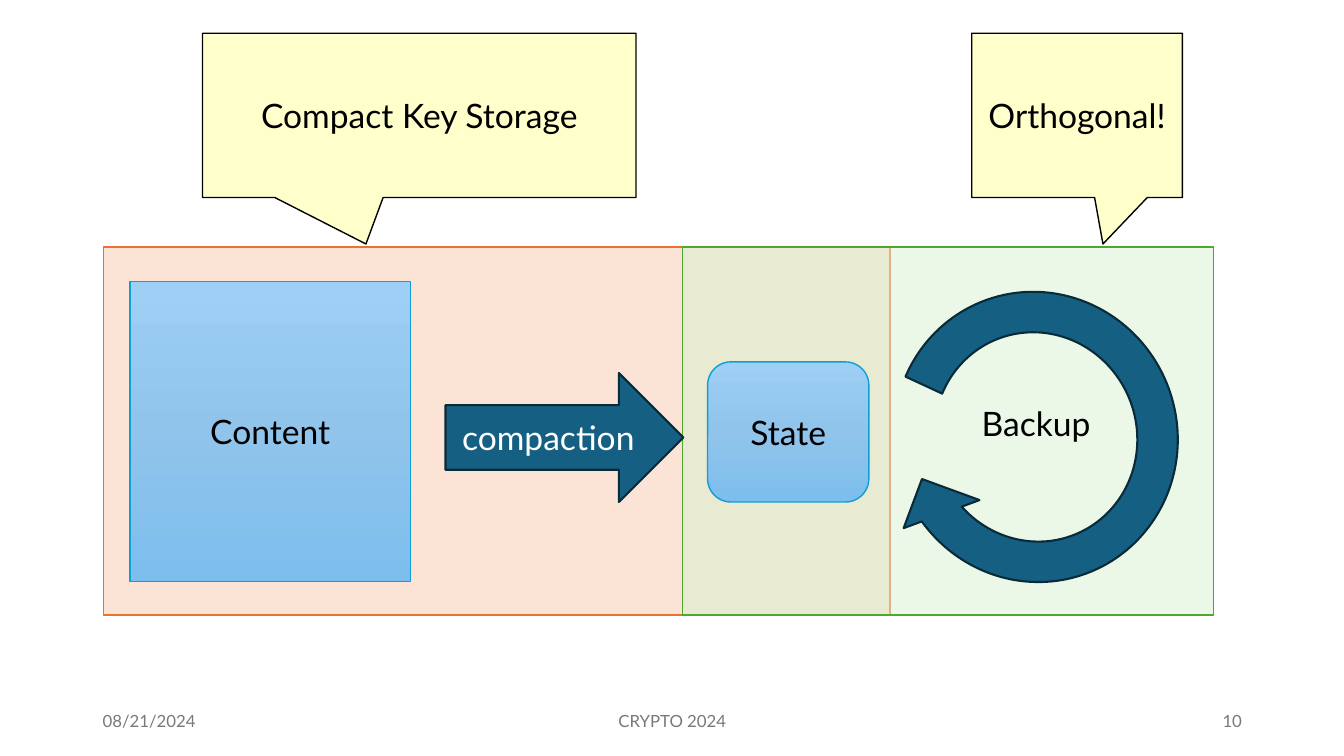
from copy import deepcopy

from lxml.etree import SubElement
from pptx import Presentation
from pptx.dml.color import RGBColor
from pptx.enum.shapes import MSO_SHAPE
from pptx.enum.text import MSO_ANCHOR, PP_ALIGN
from pptx.oxml.ns import qn
from pptx.util import Pt

deck = Presentation()
deck.slide_width, deck.slide_height = Pt(960), Pt(540)
slide = deck.slides.add_slide(deck.slide_layouts[6])


def write(shape, text, size=24, color="000000", align=PP_ALIGN.CENTER):
    frame = shape.text_frame
    frame.text = text
    frame.word_wrap = True
    frame.vertical_anchor = MSO_ANCHOR.MIDDLE
    paragraph = frame.paragraphs[0]
    paragraph.alignment = align
    font = paragraph.runs[0].font
    font.name, font.size = "Lato", Pt(size)
    font.color.rgb = RGBColor.from_string(color)


def draw(kind, box, fill, line, line_width=1, opacity=100):
    shape = slide.shapes.add_shape(kind, *map(Pt, box))
    shape.shadow.inherit = False
    shape.line.color.rgb = RGBColor.from_string(line)
    shape.line.width = Pt(line_width)
    if isinstance(fill, str):
        shape.fill.solid()
        shape.fill.fore_color.rgb = RGBColor.from_string(fill)
        if opacity < 100:
            color = shape.fill._xPr.find(qn("a:solidFill"))[0]
            SubElement(color, qn("a:alpha")).set("val", str(opacity * 1000))
    else:
        shape.fill.gradient()
        shape.fill.gradient_angle = 270
        stop_list = shape.fill._xPr.find(qn("a:gradFill")).find(qn("a:gsLst"))
        stop_list.insert(1, deepcopy(stop_list[0]))
        for stop, position, color in zip(shape.fill.gradient_stops, (0, 0.5, 1), fill):
            stop.position = position
            stop.color.rgb = RGBColor.from_string(color)
    return shape


# Overlapping areas: key storage and backup
area_top, area_height = 176.4, 262.8
draw(MSO_SHAPE.RECTANGLE, (74.16, area_top, 561.6, area_height), "FBE3D6", "E97132")
draw(MSO_SHAPE.RECTANGLE, (487.44, area_top, 379.44, area_height),
     "D9F2D0", "4EA72E", opacity=50)

# Callouts above the areas
for text, left, width, tip in [
    ("Compact Key Storage", 144.72, 309.6, -0.123),
    ("Orthogonal!", 694.08, 150.48, 0.123),
]:
    callout = draw(MSO_SHAPE.RECTANGULAR_CALLOUT, (left, 23.76, width, 117.36),
                   "FFFF99", "000000", opacity=50)
    callout.adjustments[0] = tip
    callout.adjustments[1] = 0.783
    write(callout, text)

# Content and the state it is compacted to
for text, kind, box in [
    ("Content", MSO_SHAPE.FLOWCHART_PROCESS, (92.88, 200.88, 200.16, 214.56)),
    ("State", MSO_SHAPE.ROUNDED_RECTANGLE, (505.44, 258.48, 115.2, 100.08)),
]:
    write(draw(kind, box, ("9ECFF5", "90C4EB", "7CBEED"), "0F9ED5"), text)

compaction = draw(MSO_SHAPE.RIGHT_ARROW, (318.24, 266.4, 169.92, 92.16),
                  "156082", "092A39", 1.5)
write(compaction, "compaction", color="FFFFFF")

# Backup loop
backup_loop = draw(MSO_SHAPE.CIRCULAR_ARROW, (624.24, 193.68, 231.12, 236.88),
                   "156082", "092A39", 1.5)
backup_loop.rotation = 159.7
for index, value in enumerate((0.125, 11.423, 204.577, 27.084, 0.125)):
    backup_loop.adjustments[index] = value

backup = slide.shapes.add_textbox(Pt(694.08), Pt(284.4), Pt(99.36), Pt(36))
write(backup, "Backup", align=PP_ALIGN.LEFT)

# Footer: date, venue, slide number
for text, left, width, align in [
    ("08/21/2024", 66.24, 216, PP_ALIGN.LEFT),
    ("CRYPTO 2024", 318.24, 324, PP_ALIGN.CENTER),
    ("10", 678.24, 216, PP_ALIGN.RIGHT),
]:
    footer = slide.shapes.add_textbox(Pt(left), Pt(500.4), Pt(width), Pt(28.8))
    write(footer, text, 12, "797979", align)

deck.save("out.pptx")
